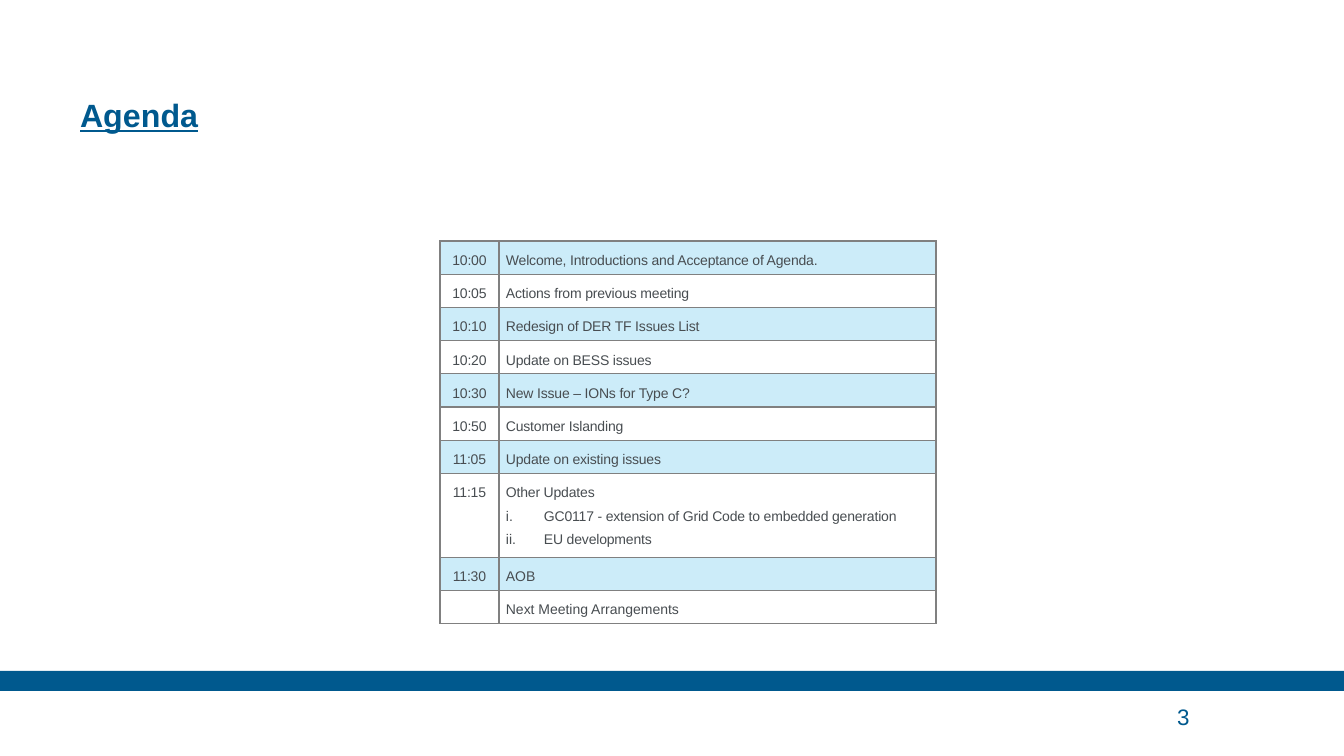
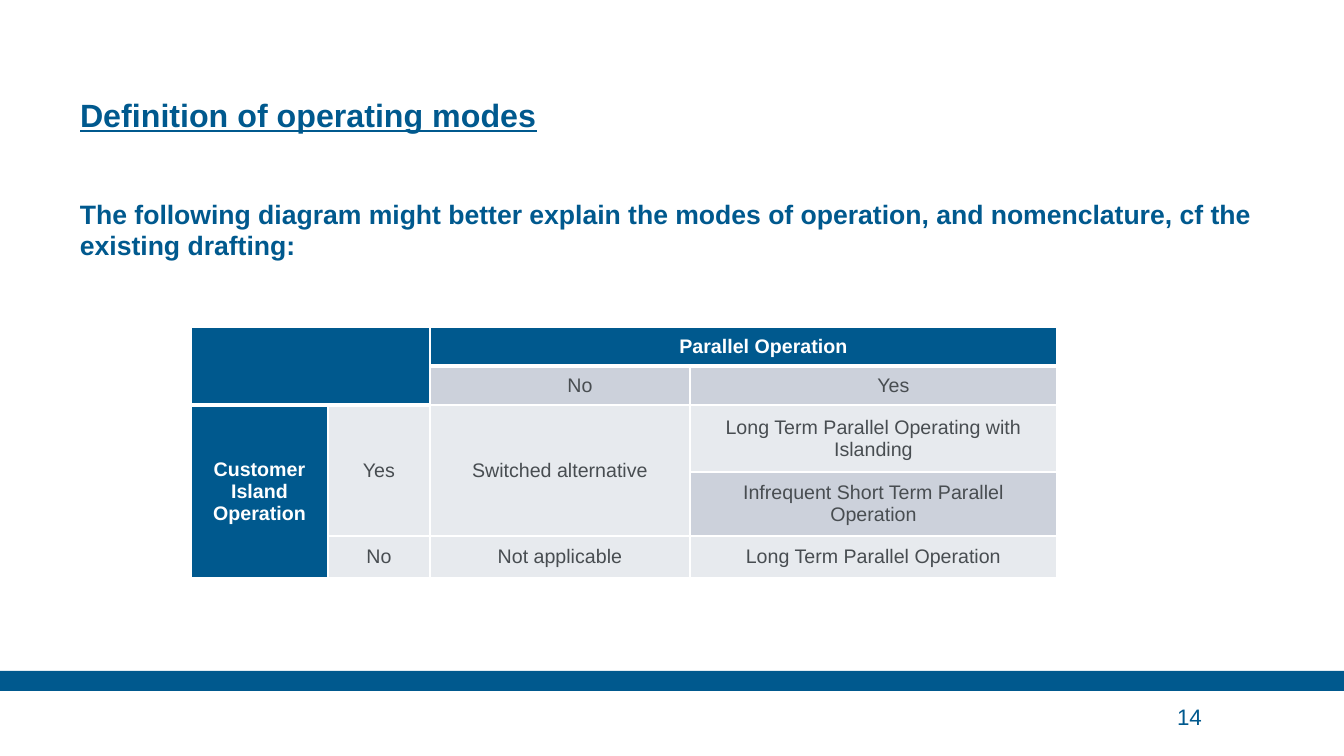
from dataclasses import dataclass
from itertools import product

from lxml import etree
from pptx import Presentation
from pptx import util as u
from pptx.dml.color import RGBColor
from pptx.enum import shapes, text
from pptx.oxml.ns import qn

PX = u.Inches(1) / 100.8
WIDTH, HEIGHT = 1344, 756
MARGIN = 80


@dataclass(frozen=True)
class Theme:
    font: str = "Arial"
    blue: str = "00598E"
    ink: str = "484D51"
    white: str = "FFFFFF"
    rule: str = "808080"
    sky: str = "CCECF9"
    mid: str = "CCD1DB"
    light: str = "E7EAEE"
    title: int = 23
    lead: int = 19
    page: int = 16
    matrix: int = 14
    agenda: int = 10


THEME = Theme()

# time, topic, numbered points below the topic, letter spacing in 1/100 pt
AGENDA = [
    ("10:00", "Welcome, Introductions and Acceptance of Agenda.", [], -10),
    ("10:05", "Actions from previous meeting", [], -10),
    ("10:10", "Redesign of DER TF Issues List", [], -10),
    ("10:20", "Update on BESS issues", [], -10),
    ("10:30", "New Issue – IONs for Type C?", [], -10),
    ("10:50", "Customer Islanding", [], -10),
    ("11:05", "Update on existing issues", [], -10),
    ("11:15", "Other Updates",
     ["GC0117 - extension of Grid Code to embedded generation", "EU developments"], -10),
    ("11:30", "AOB", [], 0),
    ("", "Next Meeting Arrangements", [], 0),
]
AGENDA_COLUMNS = [59, 437]
AGENDA_ROW, AGENDA_LINE, POINT_INDENT = 31, 24, 38

LEAD = ("The following diagram might better explain the modes of operation, "
        "and nomenclature, cf the existing drafting:")
# row, column, rows spanned, columns spanned, lines, fill, extra left inset
MODES = [
    (0, 0, 2, 2, [], THEME.blue, 0),
    (0, 2, 1, 2, ["Parallel Operation"], THEME.blue, 40),
    (1, 2, 1, 1, ["No"], THEME.mid, 40),
    (1, 3, 1, 1, ["Yes"], THEME.mid, 40),
    (2, 0, 3, 1, ["Customer", "Island Operation"], THEME.blue, 0),
    (2, 1, 2, 1, ["Yes"], THEME.light, 0),
    (2, 2, 2, 1, ["Switched alternative"], THEME.light, 0),
    (2, 3, 1, 1, ["Long Term Parallel Operating with Islanding"], THEME.light, 0),
    (3, 3, 1, 1, ["Infrequent Short Term Parallel Operation"], THEME.mid, 0),
    (4, 1, 1, 1, ["No"], THEME.light, 0),
    (4, 2, 1, 1, ["Not applicable"], THEME.light, 0),
    (4, 3, 1, 1, ["Long Term Parallel Operation"], THEME.light, 0),
]
MODE_COLUMNS = [137, 102, 260, 367]
MODE_ROWS = [39, 39, 67, 64, 42]


def px(*lengths):
    return [u.Emu(round(length * PX)) for length in lengths]


def rgb(color):
    return RGBColor.from_string(color)


def add_run(paragraph, words, size, color, bold=False, underline=False, spacing=0):
    run = paragraph.add_run()
    run.text = words
    font = run.font
    font.name, font.size, font.bold = THEME.font, u.Pt(size), bold
    font.color.rgb = rgb(color)
    if underline:
        font.underline = True
    if spacing:
        run._r.get_or_add_rPr().set("spc", str(spacing))


def add_text(slide, box, words, size, anchor, leading=None, **style):
    frame = slide.shapes.add_textbox(*px(*box)).text_frame
    frame.word_wrap = True
    frame.vertical_anchor = anchor
    frame.margin_left = frame.margin_top = frame.margin_right = frame.margin_bottom = 0
    paragraph = frame.paragraphs[0]
    if leading:
        paragraph.line_spacing = u.Pt(leading)
    add_run(paragraph, words, size, THEME.blue, **style)


def add_slide(deck, title, number):
    """Add a slide with the shared title, band and page number."""
    slide = deck.slides.add_slide(deck.slide_layouts[6])
    band = slide.shapes.add_shape(shapes.MSO_SHAPE.RECTANGLE, *px(0, 671, WIDTH, 20))
    band.shadow.inherit = False
    band.fill.solid()
    band.fill.fore_color.rgb = rgb(THEME.blue)
    band.line.fill.background()
    add_text(slide, (MARGIN, 31, 992, 103), title, THEME.title, text.MSO_ANCHOR.BOTTOM,
             leading=30, bold=True, underline=True)
    add_text(slide, (1177, 697, 124, 39), str(number), THEME.page, text.MSO_ANCHOR.MIDDLE)
    return slide


def add_grid(slide, left, top, columns, rows):
    """Add a table without the banded look."""
    table = slide.shapes.add_table(
        len(rows), len(columns), *px(left, top, sum(columns), sum(rows))).table
    table.first_row = table.horz_banding = False
    for column, width in zip(table.columns, px(*columns)):
        column.width = width
    for row, height in zip(table.rows, px(*rows)):
        row.height = height
    return table


def set_borders(cell, color, top=1, bottom=1):
    properties = cell._tc.get_or_add_tcPr()
    for side, points in (("L", 1), ("R", 1), ("T", top), ("B", bottom)):
        line = etree.SubElement(properties, qn(f"a:ln{side}"), w=str(u.Pt(points)))
        fill = etree.SubElement(line, qn("a:solidFill"))
        etree.SubElement(fill, qn("a:srgbClr"), val=color)


def style_cell(cell, fill, left, right, vertical, anchor):
    cell.fill.solid()
    cell.fill.fore_color.rgb = rgb(fill)
    cell.margin_left, cell.margin_right = px(left, right)
    cell.margin_top, cell.margin_bottom = px(vertical, vertical)
    cell.vertical_anchor = anchor


def number_point(paragraph):
    properties = paragraph._p.get_or_add_pPr()
    [indent] = px(POINT_INDENT)
    properties.set("marL", str(indent))
    properties.set("indent", str(-indent))
    etree.SubElement(properties, qn("a:buFont"), typeface=THEME.font)
    etree.SubElement(properties, qn("a:buAutoNum"), type="romanLcPeriod")


def build_agenda(deck):
    slide = add_slide(deck, "Agenda", 3)
    heights = [AGENDA_ROW + AGENDA_LINE * len(points) for _, _, points, _ in AGENDA]
    table = add_grid(slide, 440, 241, AGENDA_COLUMNS, heights)
    for row, (time, topic, points, spacing) in enumerate(AGENDA):
        fill = THEME.white if row % 2 else THEME.sky
        for column, lines in enumerate(([time], [topic, *points])):
            cell = table.cell(row, column)
            set_borders(cell, THEME.rule)
            style_cell(cell, fill, 7, 7, 4, text.MSO_ANCHOR.TOP)
            for index, words in enumerate(lines):
                frame = cell.text_frame
                paragraph = frame.add_paragraph() if index else frame.paragraphs[0]
                paragraph.line_spacing = 1.5
                if column == 0:
                    paragraph.alignment = text.PP_ALIGN.CENTER
                if index:
                    number_point(paragraph)
                if words:
                    # times keep the tight spacing in every row
                    add_run(paragraph, words, THEME.agenda, THEME.ink,
                            spacing=spacing if column else -10)
                else:
                    etree.SubElement(paragraph._p, qn("a:endParaRPr"),
                                     sz=str(THEME.agenda * 100))


def build_modes(deck):
    slide = add_slide(deck, "Definition of operating modes", 14)
    add_text(slide, (MARGIN, 199, 1222, 62), LEAD, THEME.lead, text.MSO_ANCHOR.TOP,
             leading=22, bold=True)
    table = add_grid(slide, 191, 327, MODE_COLUMNS, MODE_ROWS)
    for row, column in product(range(len(MODE_ROWS)), range(len(MODE_COLUMNS))):
        header_end = 1 if column < 2 else 0
        set_borders(table.cell(row, column), THEME.white,
                    top=3 if row == header_end + 1 else 1,
                    bottom=3 if row <= header_end else 1)
    for row, column, down, across, lines, fill, inset in MODES:
        cell = table.cell(row, column)
        if down * across > 1:
            cell.merge(table.cell(row + down - 1, column + across - 1))
        style_cell(cell, fill, 10 + inset, 10, 0, text.MSO_ANCHOR.MIDDLE)
        paragraph = cell.text_frame.paragraphs[0]
        paragraph.alignment = text.PP_ALIGN.CENTER
        heading = fill == THEME.blue
        for index, words in enumerate(lines):
            if index:
                paragraph.add_line_break()
            add_run(paragraph, words, THEME.matrix,
                    THEME.white if heading else THEME.ink, bold=heading)


def main():
    deck = Presentation()
    deck.slide_width, deck.slide_height = px(WIDTH, HEIGHT)
    build_agenda(deck)
    build_modes(deck)
    deck.save("out.pptx")


if __name__ == "__main__":
    main()
